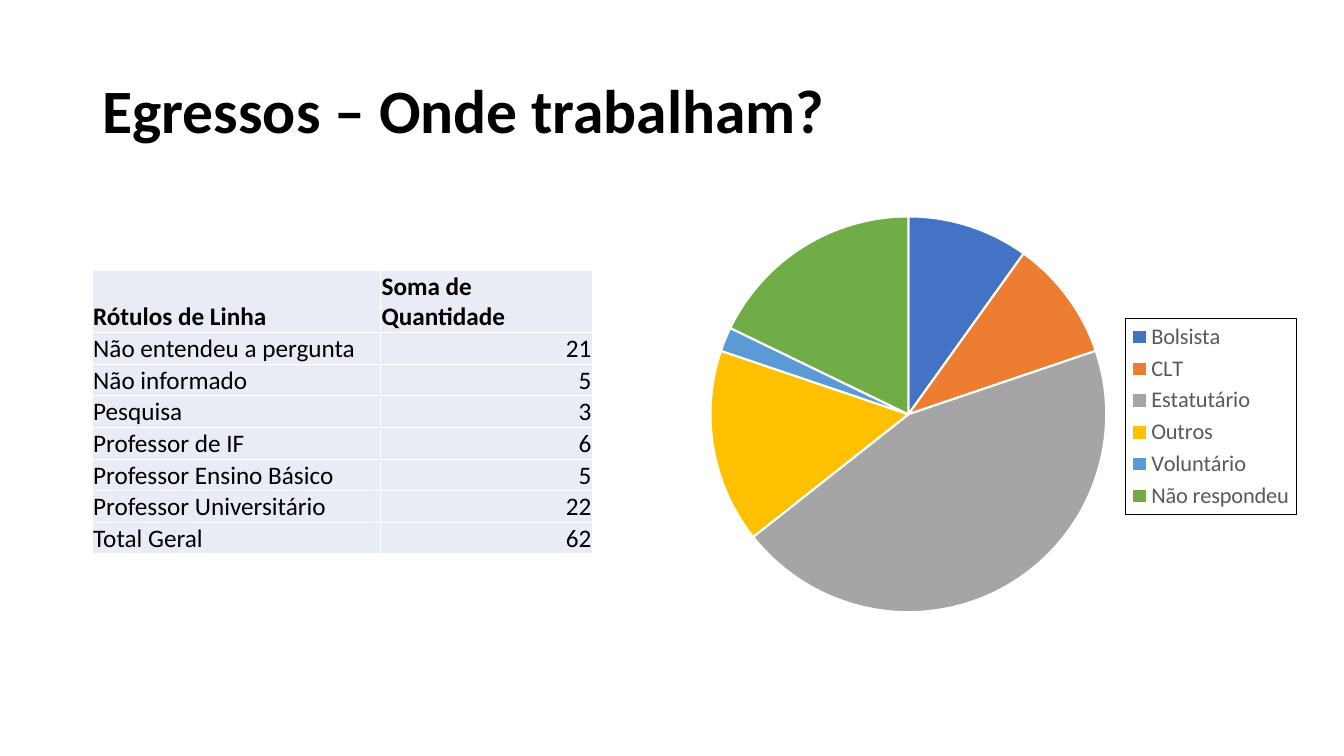
"""Build the slide on where graduates work, with a table and a pie chart."""
from lxml.etree import SubElement
from pptx import Presentation
from pptx.chart.data import CategoryChartData
from pptx.dml.color import RGBColor
from pptx.enum.chart import XL_CHART_TYPE, XL_LEGEND_POSITION
from pptx.enum.text import MSO_ANCHOR, PP_ALIGN
from pptx.oxml import parse_xml
from pptx.oxml.ns import nsdecls, qn
from pptx.util import Pt

BLACK = RGBColor(0x00, 0x00, 0x00)
WHITE = RGBColor(0xFF, 0xFF, 0xFF)
GREY = RGBColor(0x59, 0x59, 0x59)
CELL_FILL = RGBColor(0xE9, 0xEB, 0xF5)
BLUE = RGBColor(0x44, 0x72, 0xC4)
ORANGE = RGBColor(0xED, 0x7D, 0x31)
SILVER = RGBColor(0xA5, 0xA5, 0xA5)
GOLD = RGBColor(0xFF, 0xC0, 0x00)
SKY = RGBColor(0x5B, 0x9B, 0xD5)
GREEN = RGBColor(0x70, 0xAD, 0x47)

ROWS = [
    ("Rótulos de Linha", "Soma de Quantidade"),
    ("Não entendeu a pergunta", "21"),
    ("Não informado", "5"),
    ("Pesquisa", "3"),
    ("Professor de IF", "6"),
    ("Professor Ensino Básico", "5"),
    ("Professor Universitário", "22"),
    ("Total Geral", "62"),
]
SLICES = [
    ("Bolsista", 10, BLUE),
    ("CLT", 10, ORANGE),
    ("Estatutário", 45, SILVER),
    ("Outros", 16, GOLD),
    ("Voluntário", 2, SKY),
    ("Não respondeu", 18, GREEN),
]


def style_font(font, size, color, bold=False):
    font.name = "Calibri"
    font.size = Pt(size)
    font.bold = bold
    font.color.rgb = color


def add_borders(cell):
    properties = cell._tc.get_or_add_tcPr()
    for index, side in enumerate(("lnL", "lnR", "lnT", "lnB")):
        properties.insert(index, parse_xml(
            f'<a:{side} {nsdecls("a")} w="12700"><a:solidFill>'
            f'<a:srgbClr val="{WHITE}"/></a:solidFill></a:{side}>'))


deck = Presentation()
deck.slide_width, deck.slide_height = Pt(960), Pt(540)
page = deck.slides.add_slide(deck.slide_layouts[5])

title = page.shapes.title
title.left, title.top, title.width, title.height = Pt(66), Pt(28.75), Pt(828), Pt(104.4)
title.text_frame.text = "Egressos – Onde trabalham?"
title.text_frame.vertical_anchor = MSO_ANCHOR.MIDDLE
heading = title.text_frame.paragraphs[0]
heading.alignment = PP_ALIGN.LEFT
heading.line_spacing = 0.9
style_font(heading.font, 44, BLACK, True)

table = page.shapes.add_table(
    len(ROWS), 2, Pt(66), Pt(193), Pt(357), Pt(200)).table
table.columns[0].width, table.columns[1].width = Pt(206), Pt(151)
for row_index, texts in enumerate(ROWS):
    table.rows[row_index].height = Pt(22.6 if row_index else 44.6)
    for column_index, text in enumerate(texts):
        cell = table.cell(row_index, column_index)
        cell.text = text
        cell.vertical_anchor = MSO_ANCHOR.BOTTOM
        cell.margin_left = cell.margin_right = cell.margin_top = Pt(0.6)
        cell.margin_bottom = 0
        cell.fill.solid()
        cell.fill.fore_color.rgb = CELL_FILL
        add_borders(cell)
        para = cell.text_frame.paragraphs[0]
        is_number = row_index > 0 and column_index == 1
        para.alignment = PP_ALIGN.RIGHT if is_number else PP_ALIGN.LEFT
        style_font(para.font, 18, BLACK, row_index == 0)

data = CategoryChartData()
data.categories = [name for name, value, color in SLICES]
data.add_series("Series 1", [value for name, value, color in SLICES])
chart = page.shapes.add_chart(
    XL_CHART_TYPE.PIE, Pt(493), Pt(145.5), Pt(439), Pt(304), data).chart
chart.has_title = False
style_font(chart.font, 16, BLACK)
chart.plots[0].vary_by_categories = True
for index, (name, value, color) in enumerate(SLICES):
    point = chart.plots[0].series[0].points[index]
    point.format.fill.solid()
    point.format.fill.fore_color.rgb = color
    point.format.line.color.rgb = WHITE
    point.format.line.width = Pt(1.5)

chart.has_legend = True
legend = chart.legend
legend.position = XL_LEGEND_POSITION.RIGHT
legend.include_in_layout = False
style_font(legend.font, 16, GREY)
legend._element.find(qn("c:overlay")).addnext(parse_xml(
    f'<c:spPr {nsdecls("c", "a")}><a:ln w="9525"><a:solidFill>'
    f'<a:srgbClr val="{BLACK}"/></a:solidFill></a:ln></c:spPr>'))

plot_area = chart._chartSpace.chart.plotArea
for layout in plot_area.findall(qn("c:layout")):
    plot_area.remove(layout)
layout = parse_xml(f'<c:layout {nsdecls("c")}><c:manualLayout/></c:layout>')
plot_area.insert(0, layout)
settings = [("layoutTarget", "inner"), ("xMode", "edge"), ("yMode", "edge"),
            ("x", "0.03"), ("y", "0.03"), ("w", "0.65"), ("h", "0.93")]
for tag, value in settings:
    SubElement(layout[0], qn(f"c:{tag}")).set("val", value)

deck.save("out.pptx")
